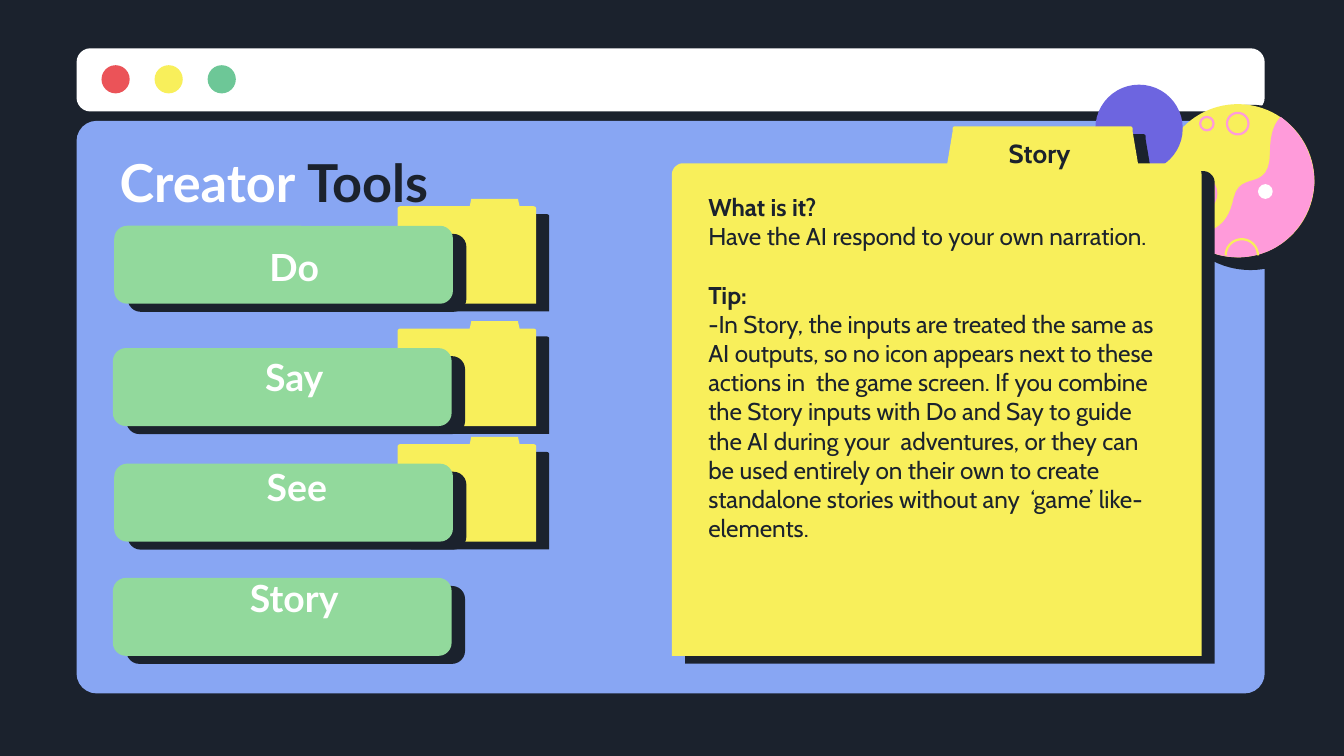
import math

import pptx
import pptx.dml.color
import pptx.enum.shapes
import pptx.enum.text
import pptx.oxml
import pptx.oxml.ns
import pptx.util

KIND = pptx.enum.shapes.MSO_SHAPE
ALIGN = pptx.enum.text.PP_ALIGN
ANCHOR = pptx.enum.text.MSO_ANCHOR
Inches, Pt = pptx.util.Inches, pptx.util.Pt

COLORS = dict(ink="1B222D", white="FFFFFF", red="EB5358", yellow="F8EF5B", mint="6DC797",
              blue="88A6F3", pink="FF9BDA", violet="6D65E0", green="92D99C")

TITLE = [("Creator ", "white"), ("Tools", "ink")]
# label, button left, button top, label left, has a folder behind
BUTTONS = [("Do", 0.85, 1.68, 1.16, True), ("Say", 0.84, 2.59, 1.16, True),
           ("See", 0.85, 3.45, 1.18, True), ("Story", 0.84, 4.3, 1.16, False)]
CARD_TAB = "Story"
# text, bold, space before in points
CARD = [
    ("What is it?", True, 0),
    ("Have the AI respond to your own narration.", False, 0),
    ("Tip:", True, 15.8),
    ("-In Story, the inputs are treated the same as AI outputs, so no icon appears next to "
     "these actions in  the game screen. If you combine the Story inputs with Do and Say to "
     "guide the AI during your  adventures, or they can be used entirely on their own to "
     "create standalone stories without any  ‘game’ like-elements.", False, 0),
]

# Steps: two numbers make a line, six make a Bezier curve.
# The folder is given in shares of its box, the land in inches.
FOLDER = [(1, 0.09), (1, 1), (0, 1), (0, 0.09), (0, 0.08, 0.01, 0.07, 0.02, 0.07),
          (0.52, 0.07), (0.53, 0.01), (0.53, 0, 0.53, 0, 0.54, 0), (0.86, 0),
          (0.87, 0, 0.87, 0, 0.87, 0.01), (0.88, 0.07), (0.98, 0.07),
          (0.99, 0.07, 1, 0.08, 1, 0.09)]
LAND = [(9.53, 0.87), (9.61, 0.93, 9.69, 1.02, 9.73, 1.12),
        (9.76, 1.19, 9.78, 1.27, 9.78, 1.36), (9.77, 1.6, 9.61, 1.82, 9.38, 1.89),
        (9.18, 1.95, 8.97, 1.9, 8.82, 1.76), (9.06, 1.73, 9.14, 1.66, 9.18, 1.47),
        (9.23, 1.26, 9.45, 1.44, 9.45, 1.13), (9.45, 0.98, 9.49, 0.91, 9.53, 0.87)]
CRATERS = [(8.92, 1.44, 0.13), (8.98, 0.92, 0.05), (9.21, 0.92, 0.08)]  # centre, radius
HALF_CRATER = (9.24, 1.9, 0.12)
DOTS = ["red", "yellow", "mint"]
BUTTON_SIZE = (2.52, 0.58)
SHADOW_STEP = (0.1, 0.06)

presentation = pptx.Presentation()
presentation.slide_width = Inches(10)
presentation.slide_height = presentation.slide_width * 9 // 16
slide = presentation.slides.add_slide(presentation.slide_layouts[1])


def rgb(name):
    return pptx.dml.color.RGBColor.from_string(COLORS[name])


def apply(target, **values):
    for name, value in values.items():
        setattr(target, name, value)


def paint(shape, fill=None, line=None, width=1.2):
    shape.shadow.inherit = False
    for part, color in ((shape.fill, fill), (shape.line.fill, line)):
        if color:
            part.solid()
            part.fore_color.rgb = rgb(color)
        else:
            part.background()
    if line:
        shape.line.width = Pt(width)
    return shape


def add_block(kind, left, top, width, height, fill, radius=None):
    shape = slide.shapes.add_shape(kind, *map(Inches, (left, top, width, height)))
    if radius is not None:
        shape.adjustments[0] = radius
    return paint(shape, fill)


def add_circle(x, y, radius, fill=None, line=None):
    shape = add_block(KIND.OVAL, x - radius, y - radius, 2 * radius, 2 * radius, fill)
    return paint(shape, fill, line)


def flatten(steps, count=12):
    """Turn line and curve steps into plain points."""
    points = []
    for step in steps:
        if len(step) == 2:
            points.append(step)
            continue
        controls = [points[-1]] + [step[i:i + 2] for i in (0, 2, 4)]
        for i in range(1, count + 1):
            t = i / count
            weights = [math.comb(3, k) * t**k * (1 - t)**(3 - k) for k in range(4)]
            points.append(tuple(sum(w * c[axis] for w, c in zip(weights, controls))
                                for axis in (0, 1)))
    return points


def add_outline(points, closed=True, **style):
    points = [(Inches(x), Inches(y)) for x, y in points]
    builder = slide.shapes.build_freeform(*points[0])
    builder.add_line_segments(points[1:], close=closed)
    return paint(builder.convert_to_shape(), **style)


def add_folder(left, top, width, height):
    points = [(left + x * width, top + y * height) for x, y in flatten(FOLDER)]
    shape = add_outline(points, fill="yellow")
    effects = shape.element.spPr.find(pptx.oxml.ns.qn("a:effectLst"))
    effects.append(pptx.oxml.parse_xml(
        f'<a:outerShdw {pptx.oxml.ns.nsdecls("a")} blurRad="0" dist="{Pt(8.2)}" '
        f'dir="{31 * 60000}" algn="bl" rotWithShape="0">'
        f'<a:srgbClr val="{COLORS["ink"]}"/></a:outerShdw>'))


def set_frame(shape, box, anchor):
    apply(shape, **dict(zip(("left", "top", "width", "height"), map(Inches, box))))
    frame = shape.text_frame
    apply(frame, word_wrap=True, auto_size=pptx.enum.text.MSO_AUTO_SIZE.NONE,
          vertical_anchor=anchor, **{f"margin_{side}": Inches(0.1)
                                     for side in ("left", "top", "right", "bottom")})
    return frame


def add_run(paragraph, text, font, size, color, bold=True):
    run = paragraph.add_run()
    run.text = text
    apply(run.font, name=font, size=Pt(size), bold=bold)
    run.font.color.rgb = rgb(color)


def add_label(text, box, font, size, color, anchor):
    shape = slide.shapes.add_textbox(0, 0, 0, 0)
    paragraph = set_frame(shape, box, anchor).paragraphs[0]
    paragraph.alignment = ALIGN.CENTER
    add_run(paragraph, text, font, size, color)


slide.background.fill.solid()
slide.background.fill.fore_color.rgb = rgb("ink")

# Browser window
add_block(KIND.ROUNDED_RECTANGLE, 0.57, 0.36, 8.84, 0.47, "white", 0.22)
for column, color in enumerate(DOTS):
    add_circle(0.86 + 0.395 * column, 0.59, 0.105, color)
add_block(KIND.ROUNDED_RECTANGLE, 0.57, 0.9, 8.84, 4.26, "blue", 0.035)

# Planet and moon
add_circle(9.305, 1.395, 0.615, "ink")
add_circle(9.21, 1.345, 0.57, "yellow")
for crater in CRATERS:
    add_circle(*crater, line="pink")
add_outline(flatten(LAND), fill="pink")
x, y, radius = HALF_CRATER
add_outline([(x - radius * math.cos(math.radians(a)), y - radius * math.sin(math.radians(a)))
             for a in range(0, 181, 10)], closed=False, line="yellow")
add_circle(9.415, 1.425, 0.055, "white")
add_circle(8.475, 0.955, 0.325, "violet")

# Folders and buttons
add_folder(5, 0.94, 3.94, 3.94)
for _, _, top, _, has_folder in reversed(BUTTONS):
    if has_folder:
        add_folder(2.96, top - 0.2, 1.03, 0.78)
for row, (label, left, top, label_left, _) in enumerate(BUTTONS):
    for step, color in ((SHADOW_STEP, "ink"), ((0, 0), "green")):
        add_block(KIND.ROUNDED_RECTANGLE, left + step[0], top + step[1], *BUTTON_SIZE,
                  color, 0.167)
    add_label(label, (label_left, 1.81 + 0.82 * row, 2.06, 0.44), "Lato", 20, "white",
              ANCHOR.BOTTOM)

# Title and card text
title, body = slide.placeholders
for placeholder in (title, body):
    placeholder.element.getparent().append(placeholder.element)  # bring to front
paragraph = set_frame(title, (0.79, 1.02, 8.43, 0.62), ANCHOR.TOP).paragraphs[0]
paragraph.alignment = ALIGN.LEFT
for text, color in TITLE:
    add_run(paragraph, text, "Lato", 28, color)

add_label(CARD_TAB, (6.87, 0.92, 1.73, 0.43), "Cabin", 14, "ink", ANCHOR.TOP)
frame = set_frame(body, (5.17, 1.33, 3.54, 3.54), ANCHOR.TOP)
for index, (text, bold, gap) in enumerate(CARD):
    paragraph = frame.add_paragraph() if index else frame.paragraphs[0]
    apply(paragraph, alignment=ALIGN.LEFT, space_before=Pt(gap))
    properties = paragraph._p.get_or_add_pPr()
    properties.set("marL", "0")
    properties.set("indent", "0")
    properties.append(pptx.oxml.parse_xml(f'<a:buNone {pptx.oxml.ns.nsdecls("a")}/>'))
    add_run(paragraph, text, "Cabin", 13, "ink", bold)

presentation.save("out.pptx")
